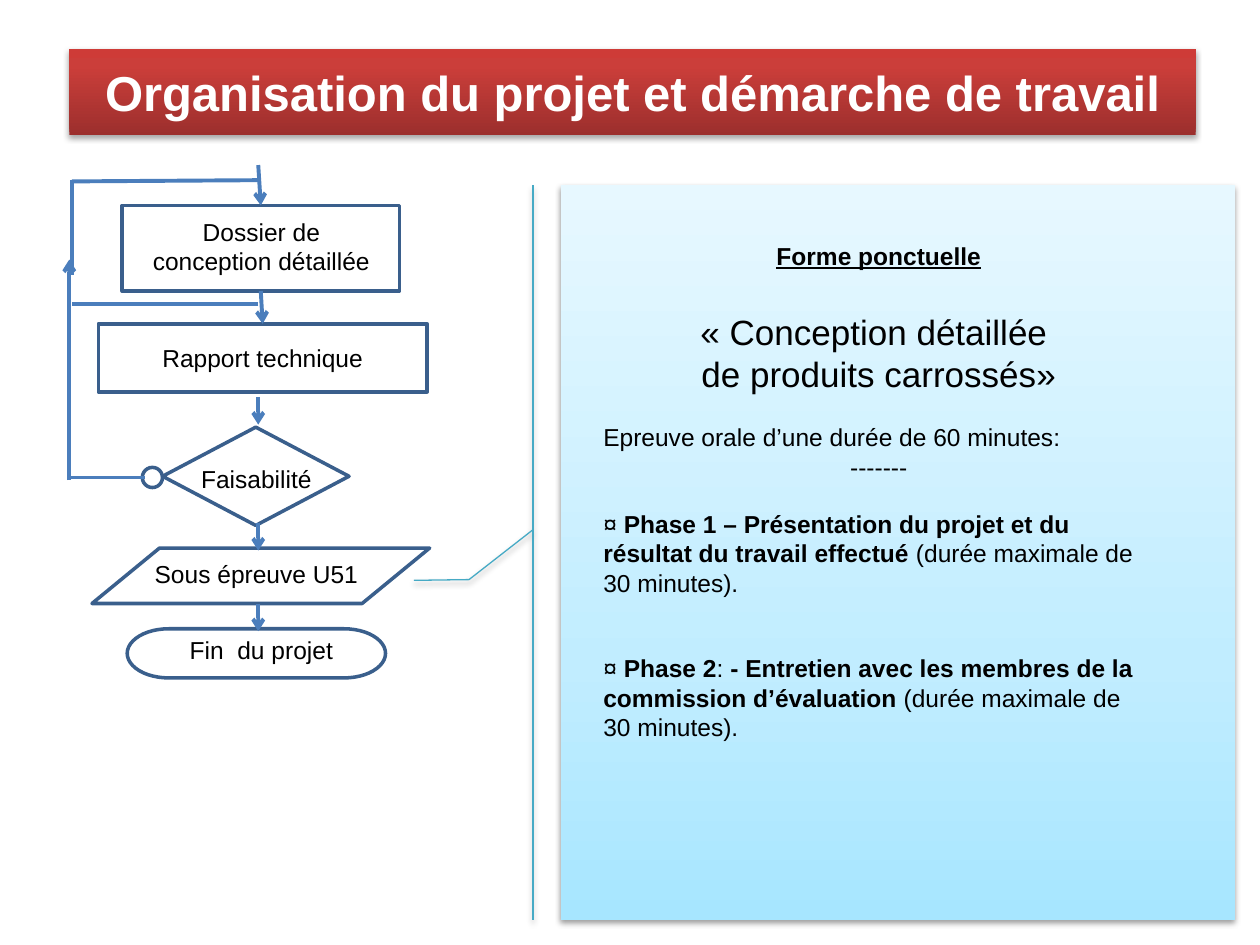
from lxml import etree
from pptx import Presentation
from pptx import util as u
from pptx.dml.color import RGBColor
from pptx.enum import shapes, text
from pptx.oxml.ns import qn

Inches, Pt = u.Inches, u.Pt
COLORS = {
    "black": "000000", "white": "FFFFFF",
    "outline": "3A5F8C", "arrow": "4B7EBC", "callout": "46AAC5",
}
PANEL_STOPS = [(0, "A7E6FF"), (35, "C1EDFF"), (100, "E7F8FF")]
BANNER_STOPS = [(0, "9C2F2D"), (80, "CB3E3A"), (100, "CE3B37")]


def color(name):
    return RGBColor.from_string(COLORS[name])


def add_depth(shape, stops, opacity):
    """Fill upwards with a gradient and drop a soft shadow below."""
    shape.fill.gradient()
    shape.fill.gradient_angle = 90
    properties = shape._element.spPr
    stop_list = properties.find(".//" + qn("a:gsLst"))
    stop_list.clear()
    for position, value in stops:
        stop = etree.SubElement(stop_list, qn("a:gs"), pos=str(position * 1000))
        etree.SubElement(stop, qn("a:srgbClr"), val=value)
    effects = etree.SubElement(properties, qn("a:effectLst"))
    shadow = etree.SubElement(effects, qn("a:outerShdw"), blurRad=str(Pt(3.1)),
                              dist=str(Pt(1.7)), dir="5400000", rotWithShape="0")
    tint = etree.SubElement(shadow, qn("a:srgbClr"), val=COLORS["black"])
    etree.SubElement(tint, qn("a:alpha"), val=str(opacity * 1000))


presentation = Presentation()
presentation.slide_width, presentation.slide_height = Inches(10), Inches(7.5)
slide = presentation.slides.add_slide(presentation.slide_layouts[5])

# Title banner
title = slide.shapes.title
title.left, title.top = Inches(0.55), Inches(0.39)
title.width, title.height = Inches(8.94), Inches(0.68)
geometry = etree.SubElement(title._element.spPr, qn("a:prstGeom"), prst="foldedCorner")
etree.SubElement(geometry, qn("a:avLst"))
title.line.fill.background()
add_depth(title, BANNER_STOPS, 35)
title.text_frame.text = "Organisation du projet et démarche de travail"
title.text_frame.auto_size = text.MSO_AUTO_SIZE.NONE
title.text_frame.vertical_anchor = text.MSO_ANCHOR.MIDDLE
paragraph = title.text_frame.paragraphs[0]
paragraph.alignment = text.PP_ALIGN.CENTER
paragraph.font.name, paragraph.font.size, paragraph.font.bold = "Arial", Pt(28), True
paragraph.font.color.rgb = color("white")

# Callout panel
panel = slide.shapes.add_shape(
    shapes.MSO_SHAPE.LINE_CALLOUT_2_ACCENT_BAR,
    Inches(4.45), Inches(1.47), Inches(5.35), Inches(5.83))
for index, value in enumerate([0.469, -0.041, 0.537, -0.136, 0.538, -0.218]):
    panel.adjustments[index] = value
panel.line.color.rgb = color("callout")
panel.line.width = Pt(0.75)
add_depth(panel, PANEL_STOPS, 38)

# Panel text: alignment, size, space before, runs of (text, bold)
CENTER, LEFT = text.PP_ALIGN.CENTER, text.PP_ALIGN.LEFT
PANEL_TEXT = [
    (CENTER, 14, 0, [("Forme ponctuelle", True)]),
    (CENTER, 20, 23, [("«\u00a0Conception détaillée ", False)]),
    (CENTER, 20, 0, [("de produits carrossés»", False)]),
    (LEFT, 14, 16, [("Epreuve orale d’une durée de 60 minutes:", False)]),
    (CENTER, 14, 0, [("-------", False)]),
    (LEFT, 14, 16, [
        ("¤ ", False),
        ("Phase 1 – Présentation du projet et du résultat du travail effectué ", True),
        ("(durée maximale de 30 minutes).", False)]),
    (LEFT, 14, 32, [
        ("¤ ", False), ("Phase 2", True), (": ", False),
        ("- Entretien avec les membres de la commission d’évaluation ", True),
        ("(durée maximale de 30 minutes).", False)]),
]
box = slide.shapes.add_textbox(Inches(4.69), Inches(1.86), Inches(4.57), Inches(4.75))
frame = box.text_frame
frame.word_wrap = True
for index, (alignment, size, space, runs) in enumerate(PANEL_TEXT):
    paragraph = frame.add_paragraph() if index else frame.paragraphs[0]
    paragraph.alignment = alignment
    paragraph.space_before = Pt(space)
    paragraph.font.name, paragraph.font.size = "Arial", Pt(size)
    paragraph.font.color.rgb = color("black")
    for words, bold in runs:
        run = paragraph.add_run()
        run.text, run.font.bold = words, bold
frame.paragraphs[0].runs[0].font.underline = True

# Flowchart steps
KIND = shapes.MSO_SHAPE
STEPS = {
    "dossier": (KIND.FLOWCHART_PROCESS, 0.97, 1.63, 2.2, 0.68),
    "rapport": (KIND.FLOWCHART_PROCESS, 0.78, 2.57, 2.61, 0.54),
    "faisabilité": (KIND.FLOWCHART_DECISION, 1.29, 3.39, 1.48, 0.78),
    "négation": (KIND.OVAL, 1.13, 3.71, 0.16, 0.16),
    "épreuve": (KIND.FLOWCHART_DATA, 0.73, 4.35, 2.68, 0.44),
    "fin": (KIND.FLOWCHART_TERMINATOR, 1.01, 4.99, 2.05, 0.39),
}
steps = {}
for name, (kind, *bounds) in STEPS.items():
    shape = slide.shapes.add_shape(kind, *map(Inches, bounds))
    shape.shadow.inherit = False
    shape.fill.background()
    shape.line.color.rgb = color("outline")
    shape.line.width = Pt(2)
    steps[name] = shape

# Step labels
LABELS = [
    ("Dossier de\nconception détaillée", 1.01, 1.67, 2.13, 0.57),
    ("Rapport technique", 0.53, 2.67, 3.11, 0.34),
    ("Faisabilité", 1.41, 3.63, 1.25, 0.34),
    ("Sous épreuve U51", 0.97, 4.39, 2.13, 0.34),
    ("Fin  du projet", 1.01, 4.99, 2.13, 0.34),
]
for words, *bounds in LABELS:
    label = slide.shapes.add_textbox(*map(Inches, bounds))
    label.text_frame.word_wrap = True
    label.text_frame.text = words
    for paragraph in label.text_frame.paragraphs:
        paragraph.alignment = CENTER
        paragraph.font.name, paragraph.font.size = "Arial", Pt(14)
        paragraph.font.color.rgb = color("black")

# Flow lines: from, to, arrowhead, joined begin, joined end
LINES = [
    ((2.05, 1.31), (2.05, 1.63), True, None, ("dossier", 0)),
    ((2.06, 2.31), (2.06, 2.57), True, ("dossier", 2), ("rapport", 0)),
    ((2.05, 3.15), (2.05, 3.37), True, None, None),
    ((2.05, 4.15), (2.05, 4.37), True, None, None),
    ((2.05, 4.79), (2.05, 5.01), True, None, None),
    # Feedback loop
    ((1.15, 3.79), (0.55, 3.79), False, None, None),
    ((0.55, 3.81), (0.55, 2.06), True, None, None),
    ((0.57, 2.18), (0.57, 1.43), False, None, None),
    ((2.05, 1.43), (0.57, 1.44), False, None, None),
    ((2.05, 2.41), (0.57, 2.41), False, None, None),
]
for start, end, arrowhead, joined_begin, joined_end in LINES:
    connector = slide.shapes.add_connector(
        shapes.MSO_CONNECTOR.STRAIGHT, *map(Inches, start + end))
    connector.line.color.rgb = color("arrow")
    connector.line.width = Pt(2.25)
    if joined_begin:
        connector.begin_connect(steps[joined_begin[0]], joined_begin[1])
    if joined_end:
        connector.end_connect(steps[joined_end[0]], joined_end[1])
    properties = connector._element.spPr
    if arrowhead:
        etree.SubElement(properties.find(qn("a:ln")), qn("a:tailEnd"), type="arrow")
    etree.SubElement(properties, qn("a:effectLst"))

presentation.save("out.pptx")
